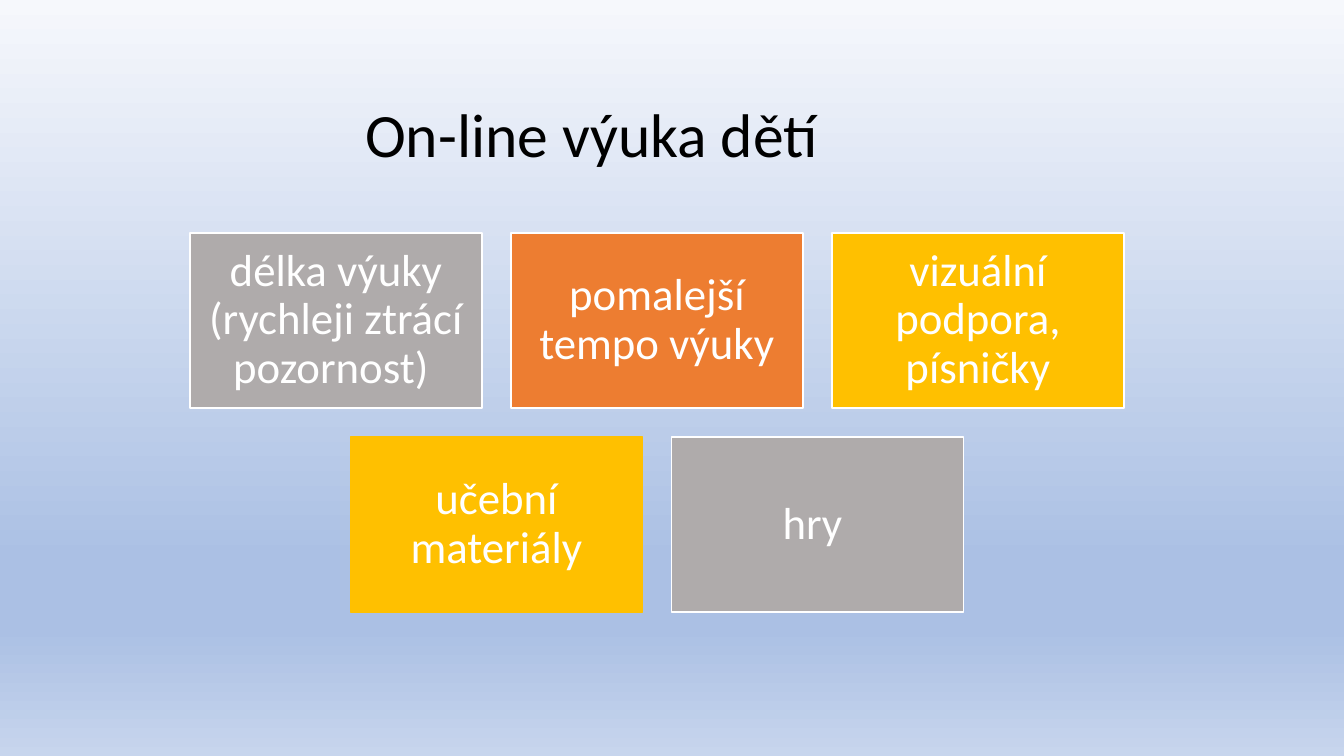
import copy
import pptx
import pptx.dml.color
import pptx.enum.text
import pptx.oxml.ns
import pptx.util
import pptx.enum.shapes

TITLE = "On-line výuka dětí"
TOPIC_ROWS = [
    [
        ("délka výuky (rychleji ztrácí pozornost) ", "gray", "white"),
        ("pomalejší tempo výuky", "orange", "white"),
        ("vizuální podpora, písničky", "gold", "white"),
    ],
    [
        ("učební materiály", "gold", "gold"),
        ("hry ", "gray", "white"),
    ],
]
COLORS = {
    "black": "000000",
    "white": "FFFFFF",
    "gray": "AFABAB",
    "orange": "ED7D31",
    "gold": "FFC000",
    "sky_top": "F6F8FC",
    "sky_deep": "ABC0E4",
    "sky_bottom": "C7D5ED",
}
SKY = [(0, "sky_top"), (0.74, "sky_deep"), (0.83, "sky_deep"), (1, "sky_bottom")]
FONT = "Calibri"
SLIDE_W, SLIDE_H = 1344, 756
TITLE_BOX = (355, 75, 634, 101)
TOPIC_W, TOPIC_H, GAP = 292, 175, 29
GRID_CENTER, GRID_TOP = 657, 233
INSET = 13


def px(length):
    return pptx.util.Emu(round(length * 914400 / 100.8))


def color(name):
    return pptx.dml.color.RGBColor.from_string(COLORS[name])


def style(paragraph, size, name, alignment):
    paragraph.alignment = alignment
    paragraph.line_spacing = 0.9
    paragraph.font.size = pptx.util.Pt(size)
    paragraph.font.name = FONT
    paragraph.font.color.rgb = color(name)


def paint_background(slide):
    fill = slide.background.fill
    fill.gradient()
    fill.gradient_angle = 270
    stop_list = slide.element.find(".//" + pptx.oxml.ns.qn("a:gsLst"))
    while len(stop_list) < len(SKY):
        stop_list.append(copy.deepcopy(stop_list[0]))
    for stop, (position, name) in zip(fill.gradient_stops, SKY):
        stop.position = position
        stop.color.rgb = color(name)


def add_title(slide):
    title = slide.shapes.title
    title.left, title.top, title.width, title.height = map(px, TITLE_BOX)
    frame = title.text_frame
    frame.text = TITLE
    frame.auto_size = pptx.enum.text.MSO_AUTO_SIZE.NONE
    frame.vertical_anchor = pptx.enum.text.MSO_ANCHOR.BOTTOM
    style(frame.paragraphs[0], 44, "black", pptx.enum.text.PP_ALIGN.LEFT)


def add_topic(slide, left, top, text, fill, outline):
    topic = slide.shapes.add_shape(
        pptx.enum.shapes.MSO_SHAPE.RECTANGLE, px(left), px(top), px(TOPIC_W), px(TOPIC_H)
    )
    topic.shadow.inherit = False
    topic.fill.solid()
    topic.fill.fore_color.rgb = color(fill)
    topic.line.color.rgb = color(outline)
    topic.line.width = pptx.util.Pt(1)
    frame = topic.text_frame
    frame.text = text
    frame.word_wrap = True
    frame.vertical_anchor = pptx.enum.text.MSO_ANCHOR.MIDDLE
    frame.margin_left = frame.margin_right = px(INSET)
    frame.margin_top = frame.margin_bottom = px(INSET)
    style(frame.paragraphs[0], 32, "white", pptx.enum.text.PP_ALIGN.CENTER)


def main():
    deck = pptx.Presentation()
    deck.slide_width, deck.slide_height = px(SLIDE_W), px(SLIDE_H)
    slide = deck.slides.add_slide(deck.slide_layouts.get_by_name("Title Only"))
    paint_background(slide)
    add_title(slide)
    for row, topics in enumerate(TOPIC_ROWS):
        row_width = len(topics) * (TOPIC_W + GAP) - GAP
        row_left = GRID_CENTER - row_width / 2
        top = GRID_TOP + row * (TOPIC_H + GAP)
        for column, topic in enumerate(topics):
            add_topic(slide, row_left + column * (TOPIC_W + GAP), top, *topic)
    deck.save("out.pptx")


if __name__ == "__main__":
    main()
